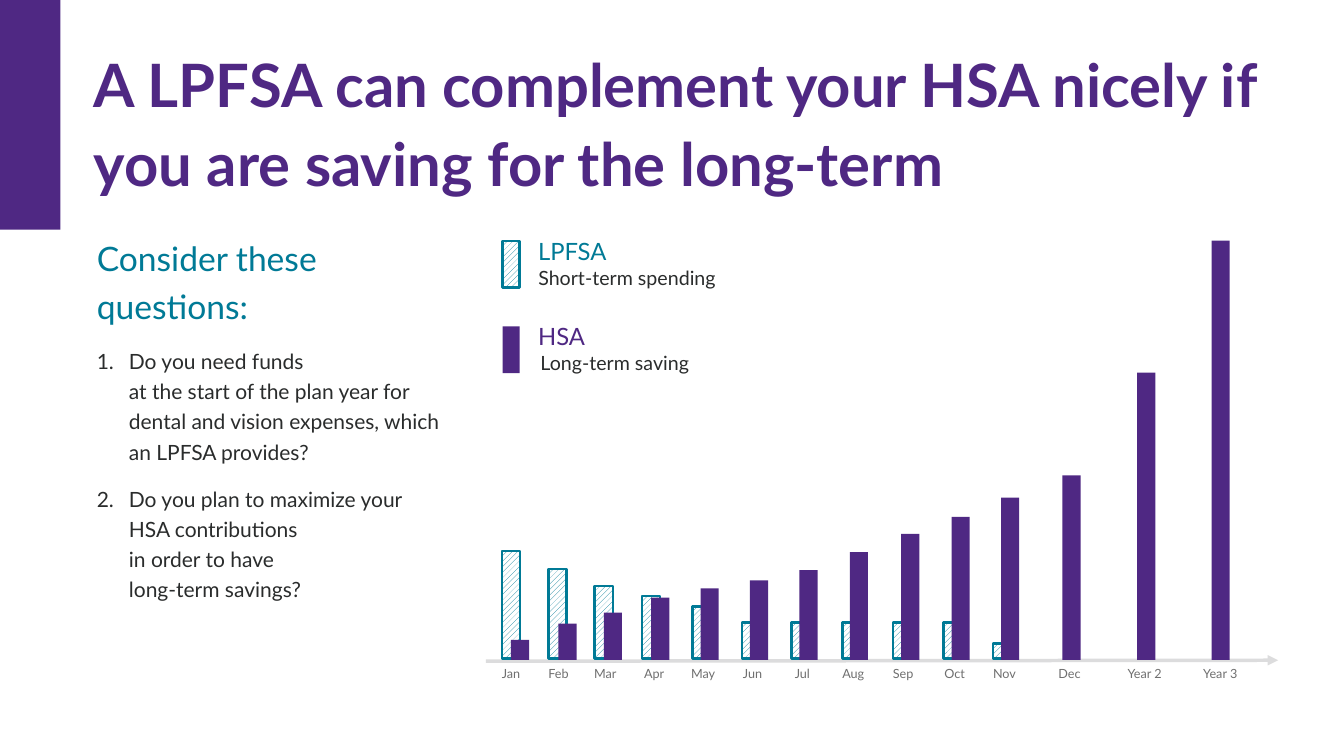
from pptx import Presentation
from pptx.dml.color import RGBColor as RGB
from pptx.enum.dml import MSO_PATTERN as Pattern
from pptx.enum.shapes import MSO_CONNECTOR as Connector, MSO_SHAPE as Shape
from pptx.enum.text import PP_ALIGN as Align
from pptx.oxml.ns import qn
from pptx.util import Pt
from lxml.etree import SubElement

# Content
TITLE = "A LPFSA can complement your HSA nicely if you are saving for the long-term"
HEADING = "Consider these questions:"
QUESTIONS = [
    "Do you need funds \vat the start of the plan year for dental and vision expenses, "
    "which an LPFSA provides?",
    "Do you plan to maximize your \vHSA contributions \vin order to\u00a0have \vlong-term savings?",
]
# Name, note, colour, hatched, top of the key, left of the note
LEGEND = [
    ("LPFSA", "Short-term spending", "teal", True, 172, 375.1),
    ("HSA", "Long-term saving", "purple", False, 233.2, 376.6),
]
# Period, label centre, (left, height) of LPFSA, (left, height) of HSA
PERIODS = [
    ("Jan", 365.0, (358.6, 77.0), (365.0, 14.4)),
    ("Feb", 398.9, (391.7, 64.1), (398.9, 25.9)),
    ("Mar", 432.4, (424.8, 51.8), (431.3, 33.8)),
    ("Apr", 467.3, (458.6, 44.6), (465.1, 44.6)),
    ("May", 502.2, (494.6, 37.4), (500.4, 51.1)),
    ("Jun", 537.5, (529.9, 25.9), (535.7, 56.9)),
    ("Jul", 573.1, (565.2, 25.9), (571.0, 64.1)),
    ("Aug", 609.5, (601.9, 25.9), (607.0, 77.0)),
    ("Sep", 645.1, (637.9, 25.9), (643.7, 90.0)),
    ("Oct", 681.8, (673.9, 25.9), (679.7, 102.2)),
    ("Nov", 717.5, (709.2, 10.8), (715.0, 115.9)),
    ("Dec", 763.9, None, (758.9, 131.8)),
    ("Year 2", 817.6, None, (812.2, 205.2)),
    ("Year 3", 871.6, None, (865.4, 299.5)),
]

THEME = {
    "font": "Lato",
    "purple": RGB.from_string("4F2883"), "teal": RGB.from_string("007A96"),
    "dark": RGB.from_string("2A2C2C"), "grey": RGB.from_string("6F6F6F"),
    "axis": RGB.from_string("DCDCDD"), "white": RGB.from_string("FFFFFF"),
    "title": 42.7, "heading": 24, "body": 15, "name": 17, "note": 14, "label": 9,
}
BAR_W = 13
SPEND_BASE, SAVE_BASE = 470.5, 471.4
LABEL_TOP, LABEL_W, LABEL_H = 472.3, 46, 21.6

prs = Presentation()
prs.slide_width, prs.slide_height = Pt(960), Pt(540)
s = prs.slides.add_slide(prs.slide_layouts[6])


def style(p, size, color, bold=False):
    for r in p.runs:
        r.font.name, r.font.size = THEME["font"], Pt(THEME[size])
        r.font.color.rgb, r.font.bold = THEME[color], bold


def add_text(x, y, w, h, text, size, color, inset=(7.2, 3.6), wrap=True, bold=False):
    tf = s.shapes.add_textbox(Pt(x), Pt(y), Pt(w), Pt(h)).text_frame
    tf.margin_left = tf.margin_right = Pt(inset[0])
    tf.margin_top = tf.margin_bottom = Pt(inset[1])
    tf.word_wrap = wrap
    tf.text = text
    style(tf.paragraphs[0], size, color, bold)
    return tf


def add_bar(x, y, w, h, color, hatched=False):
    sp = s.shapes.add_shape(Shape.RECTANGLE, Pt(x), Pt(y), Pt(w), Pt(h))
    sp.shadow.inherit = False
    if hatched:
        sp.fill.patterned()
        sp.fill.pattern = Pattern.WIDE_UPWARD_DIAGONAL
        sp.fill.fore_color.rgb = THEME[color]
        sp.fill.back_color.rgb = THEME["white"]
        sp.line.color.rgb, sp.line.width = THEME[color], Pt(1.75)
    else:
        sp.fill.solid()
        sp.fill.fore_color.rgb = THEME[color]
        sp.line.fill.background()


# Corner accent and title
add_bar(0, 0, 43.2, 164, "purple")
tf = add_text(67, 28.8, 853.2, 167, TITLE, "title", "purple", inset=(0, 0), bold=True)
tf.paragraphs[0].line_spacing = 1.1

# Numbered questions
tf = add_text(69.1, 164.2, 255.6, 310.3, HEADING, "heading", "teal", inset=(0, 0))
for question in QUESTIONS:
    p = tf.add_paragraph()
    p.text = question
    pPr = p._p.get_or_add_pPr()
    pPr.set("marL", str(Pt(23)))
    pPr.set("indent", str(-Pt(23)))
    SubElement(pPr, qn("a:buFont")).set("typeface", "+mj-lt")
    SubElement(pPr, qn("a:buAutoNum")).set("type", "arabicPeriod")
    style(p, "body", "dark")
for p in tf.paragraphs:
    p.line_spacing, p.space_after = 1.2, Pt(12)

# Time axis
axis = s.shapes.add_connector(Connector.STRAIGHT, Pt(347), Pt(472.3), Pt(913), Pt(471.6))
axis.line.color.rgb, axis.line.width = THEME["axis"], Pt(2.5)
SubElement(axis.line._get_or_add_ln(), qn("a:tailEnd")).set("type", "triangle")
SubElement(axis._element.spPr, qn("a:effectLst"))

# Bars and period labels
for label, center, spend, save in PERIODS:
    add_text(center - LABEL_W / 2, LABEL_TOP, LABEL_W, LABEL_H, label,
             "label", "grey").paragraphs[0].alignment = Align.CENTER
    if spend:
        left, height = spend
        add_bar(left, SPEND_BASE - height, BAR_W, height, "teal", hatched=True)
    left, height = save
    add_bar(left, SAVE_BASE - height, BAR_W, height, "purple")

# Legend
for name, note, color, hatched, top, note_left in LEGEND:
    add_bar(359, top, 12.2, 33.4, color, hatched)
    add_text(377.3, top - 6.6, 69, 28, name, "name", color, wrap=False)
    add_text(note_left, top + 9.2, 244, 36, note, "note", "dark", inset=(9.4, 9.4))

prs.save("out.pptx")
